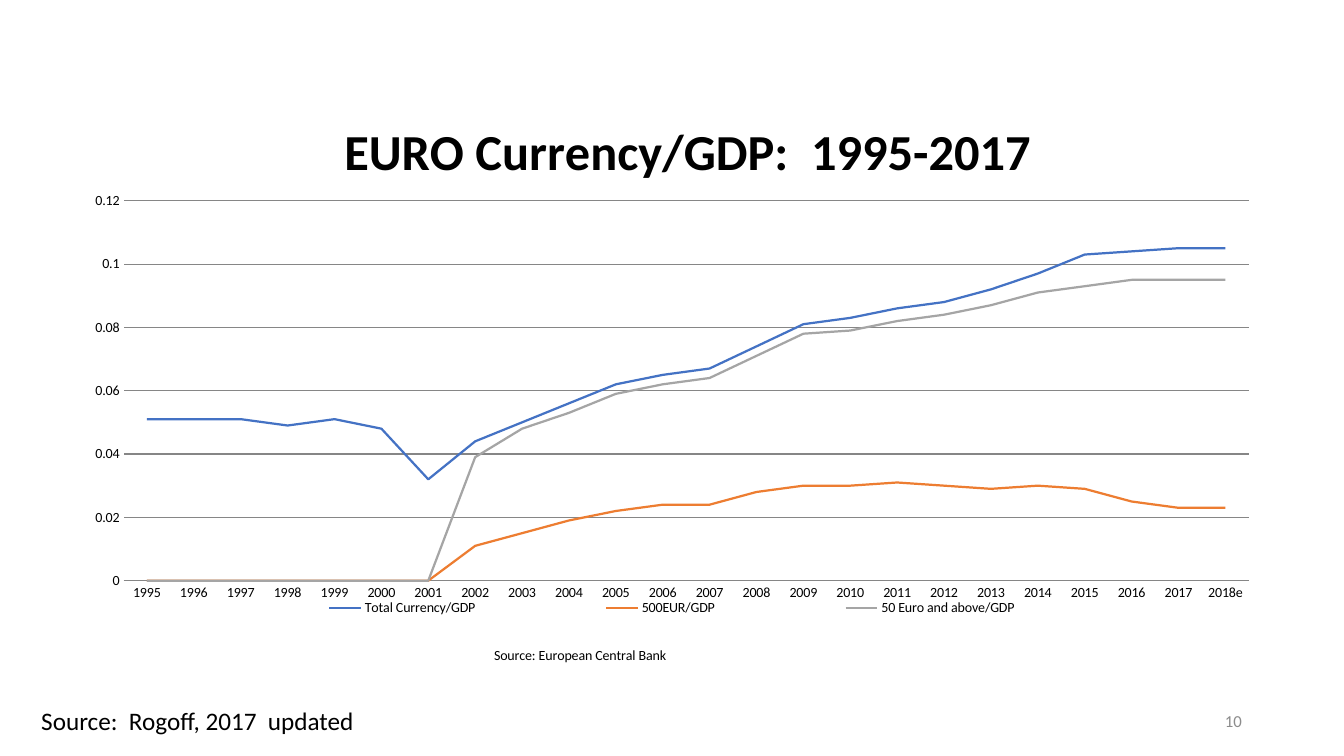
from lxml import etree
from pptx import Presentation
from pptx.chart.data import CategoryChartData
from pptx.dml.color import RGBColor
from pptx.enum.chart import XL_CHART_TYPE, XL_LEGEND_POSITION, XL_MARKER_STYLE, XL_TICK_MARK
from pptx.enum.text import MSO_ANCHOR, PP_ALIGN
from pptx.oxml.ns import qn
from pptx.util import Cm, Pt

LINE = XL_CHART_TYPE.LINE
BOTTOM = XL_LEGEND_POSITION.BOTTOM
NO_MARKER = XL_MARKER_STYLE.NONE
NO_TICK = XL_TICK_MARK.NONE
MIDDLE, TOP = MSO_ANCHOR.MIDDLE, MSO_ANCHOR.TOP
LEFT, RIGHT = PP_ALIGN.LEFT, PP_ALIGN.RIGHT

BLACK = RGBColor(0x00, 0x00, 0x00)
PAGE_GRAY = RGBColor(0x8C, 0x8C, 0x8C)
GRID_GRAY = RGBColor(0x86, 0x86, 0x86)
BLUE = RGBColor(0x44, 0x72, 0xC4)
ORANGE = RGBColor(0xED, 0x7D, 0x31)
GRAY = RGBColor(0xA5, 0xA5, 0xA5)


def place(element, **fractions):
    """Give a chart part a manual layout, in fractions of the chart."""
    for old in element.findall(qn("c:layout")):
        element.remove(old)
    overlay = element.find(qn("c:overlay"))
    layout = etree.Element(qn("c:layout"))
    element.insert(0 if overlay is None else element.index(overlay), layout)
    manual = etree.SubElement(layout, qn("c:manualLayout"))
    settings = {"xMode": "edge", "yMode": "edge", **fractions}
    if element.tag == qn("c:plotArea"):
        settings = {"layoutTarget": "inner", **settings}
    for name, value in settings.items():
        etree.SubElement(manual, qn(f"c:{name}")).set("val", str(value))


def write(frame, text, **font_values):
    """Write one run of Calibri text and return its paragraph."""
    para = frame.paragraphs[0]
    span = para.add_run()
    span.text = text
    color = font_values.pop("color", BLACK)
    for name, value in {"name": "Calibri", "bold": False, **font_values}.items():
        setattr(span.font, name, value)
    span.font.color.rgb = color
    return para


deck = Presentation()
deck.slide_width, deck.slide_height = Cm(33.87), Cm(19.05)
page = deck.slides.add_slide(deck.slide_layouts[6])

# Chart data: the euro notes start in 2002
years = [str(year) for year in range(1995, 2018)] + ["2018e"]
before_euro = [None] * 7
series_table = [
    ("Total Currency/GDP", BLUE,
     [0.051, 0.051, 0.051, 0.049, 0.051, 0.048, 0.032, 0.044, 0.05, 0.056, 0.062, 0.065,
      0.067, 0.074, 0.081, 0.083, 0.086, 0.088, 0.092, 0.097, 0.103, 0.104, 0.105, 0.105]),
    ("500EUR/GDP", ORANGE, before_euro +
     [0.011, 0.015, 0.019, 0.022, 0.024, 0.024, 0.028, 0.03, 0.03,
      0.031, 0.03, 0.029, 0.03, 0.029, 0.025, 0.023, 0.023]),
    ("50 Euro and above/GDP", GRAY, before_euro +
     [0.039, 0.048, 0.053, 0.059, 0.062, 0.064, 0.071, 0.078, 0.079,
      0.082, 0.084, 0.087, 0.091, 0.093, 0.095, 0.095, 0.095]),
]
data = CategoryChartData(number_format="General")
data.categories = years
for name, color, values in series_table:
    data.add_series(name, values)

chart = page.shapes.add_chart(LINE, Cm(1.78), Cm(1.78), Cm(30.3), Cm(15.47), data).chart
chart.font.name, chart.font.size = "Calibri", Pt(10)
chart.font.color.rgb = BLACK

# Series lines
plot = chart.plots[0]
plot.vary_by_categories = False
for series, (name, color, values) in zip(plot.series, series_table):
    series.smooth = False
    series.marker.style = NO_MARKER
    series.format.line.color.rgb = color
    series.format.line.width = Pt(1.6)

# Axes and gridlines
year_axis, share_axis = chart.category_axis, chart.value_axis
for axis in (year_axis, share_axis):
    axis.major_tick_mark = axis.minor_tick_mark = NO_TICK
share_axis.minimum_scale, share_axis.maximum_scale, share_axis.major_unit = 0, 0.12, 0.02
share_axis.format.line.fill.background()
share_axis.has_major_gridlines = True
for line in (year_axis.format.line, share_axis.major_gridlines.format.line):
    line.color.rgb = GRID_GRAY
    line.width = Pt(0.75)

# Titles and legend
chart.has_title = True
write(chart.chart_title.text_frame, "EURO Currency/GDP:  1995-2017", size=Pt(36), bold=True)
write(year_axis.axis_title.text_frame, "Source: European Central Bank", size=Pt(10))
chart.has_legend = True
chart.legend.position = BOTTOM
chart.legend.include_in_layout = False

# Layout of the chart parts, empty years drawn as zero
chart_root = chart.plots[0]._element.getparent().getparent()
place(chart_root.find(qn("c:plotArea")), x=0.044, y=0.212, w=0.936, h=0.619)
place(chart.chart_title._element, x=0.22, y=0.06)
place(year_axis.axis_title._element, x=0.35, y=0.934)
place(chart.legend._element, x=0.11, y=0.857, w=0.78, h=0.036)
chart_root.find(qn("c:dispBlanksAs")).set("val", "zero")

# Source note and page number
notes = [
    ("Source:  Rogoff, 2017  updated", 0.79, 8.48, 18, BLACK, LEFT, TOP, False),
    ("10", 23.93, 7.62, 12, PAGE_GRAY, RIGHT, MIDDLE, True),
]
for text, left, width, size, color, align, anchor, wrap in notes:
    box = page.shapes.add_textbox(Cm(left), Cm(17.65), Cm(width), Cm(1.02))
    box.text_frame.word_wrap = wrap
    box.text_frame.vertical_anchor = anchor
    write(box.text_frame, text, size=Pt(size), color=color).alignment = align

deck.save("out.pptx")
